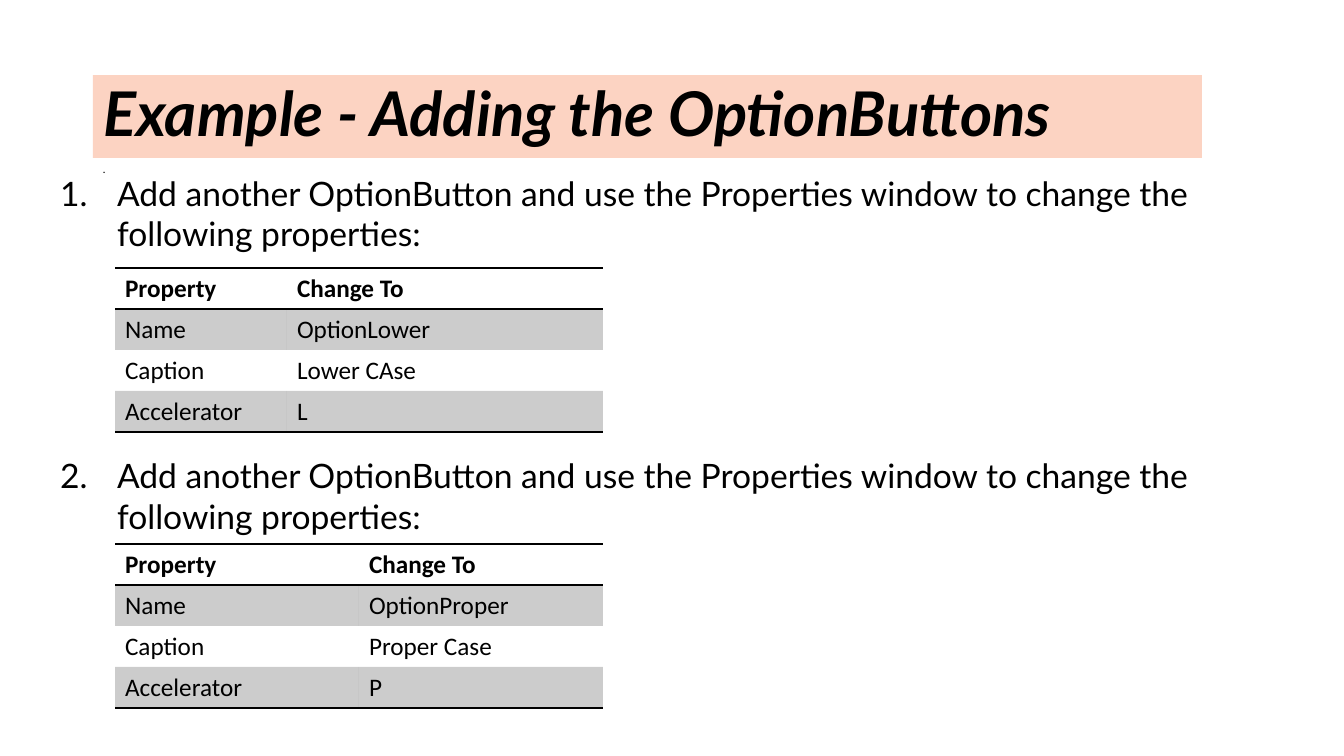
import pptx
import pptx.dml.color
import pptx.enum.text
import pptx.oxml.ns
import pptx.util
from lxml import etree

PX = 914400 / 100.8
BLACK = pptx.dml.color.RGBColor(0x00, 0x00, 0x00)
PEACH = pptx.dml.color.RGBColor(0xFC, 0xD3, 0xC2)
PLAIN_TABLE_STYLE = "{2D5ABB26-0587-4C30-8999-92F81FD0307C}"
BAND_OPACITY = 20

STEP = "Add another OptionButton and use the Properties window to change the following properties:"
LOWER_ROWS = [("Property", "Change To"), ("Name", "OptionLower"),
              ("Caption", "Lower CAse"), ("Accelerator", "L")]
PROPER_ROWS = [("Property", "Change To"), ("Name", "OptionProper"),
               ("Caption", "Proper Case"), ("Accelerator", "P")]


def px(count):
    return pptx.util.Emu(round(count * PX))


def add_element(parent, tag, **attributes):
    element = etree.SubElement(parent, pptx.oxml.ns.qn(tag))
    for name, value in attributes.items():
        element.set(name, str(value))
    return element


def place(box, left, top, width, height):
    box.left, box.top, box.width, box.height = map(px, (left, top, width, height))


def style_text(paragraph, font_name, size, bold=False, italic=False):
    for span in paragraph.runs:
        span.font.name = font_name
        span.font.size = pptx.util.Pt(size)
        span.font.bold = bold
        span.font.italic = italic
        span.font.color.rgb = BLACK


def fill_title(box, text):
    place(box, 93, 75, 1109, 83)
    box.fill.solid()
    box.fill.fore_color.rgb = PEACH
    frame = box.text_frame
    frame.text = text
    frame.auto_size = pptx.enum.text.MSO_AUTO_SIZE.NONE
    frame.vertical_anchor = pptx.enum.text.MSO_ANCHOR.MIDDLE
    paragraph = frame.paragraphs[0]
    paragraph.alignment = pptx.enum.text.PP_ALIGN.LEFT
    paragraph.line_spacing = 0.9
    style_text(paragraph, "Lato", 44, bold=True, italic=True)


def fill_steps(box, steps, gap):
    """Write a numbered list with a gap in points, where a table fits, between steps."""
    place(box, 50, 168, 1151, 417)
    frame = box.text_frame
    frame.text = "\n".join(steps)
    frame.auto_size = pptx.enum.text.MSO_AUTO_SIZE.NONE
    for index, paragraph in enumerate(frame.paragraphs):
        properties = paragraph._p.get_or_add_pPr()
        properties.set("marL", str(px(57)))
        properties.set("indent", str(px(-57)))
        add_element(properties, "a:buFont", typeface="+mj-lt")
        add_element(properties, "a:buAutoNum", type="arabicPeriod")
        paragraph.space_before = pptx.util.Pt(gap if index else 0)
        style_text(paragraph, "Lato", 24)


def add_small_text(page, text):
    box = page.shapes.add_textbox(px(93), px(157), px(1159), px(586))
    box.text_frame.word_wrap = True
    box.text_frame.text = text
    style_text(box.text_frame.paragraphs[0], "Lato", 8)


def add_border(cell, tag):
    line = add_element(cell._tc.get_or_add_tcPr(), tag, w=pptx.util.Pt(1))
    add_element(add_element(line, "a:solidFill"), "a:srgbClr", val=BLACK)


def shade(cell):
    cell.fill.solid()
    cell.fill.fore_color.rgb = BLACK
    color = cell._tc.tcPr.find(".//" + pptx.oxml.ns.qn("a:solidFill") + "[last()]/"
                               + pptx.oxml.ns.qn("a:srgbClr")) \
        if cell._tc.tcPr.find(pptx.oxml.ns.qn("a:lnB")) is None \
        else cell._tc.tcPr.find(pptx.oxml.ns.qn("a:solidFill"))[0]
    add_element(color, "a:alpha", val=BAND_OPACITY * 1000)


def add_property_table(page, top, column_widths, rows):
    frame = page.shapes.add_table(len(rows), len(column_widths), px(115), px(top),
                                  px(sum(column_widths)), px(41 * len(rows)))
    table = frame.table
    table.first_row = table.horz_banding = False
    table._tbl.tblPr.find(pptx.oxml.ns.qn("a:tableStyleId")).text = PLAIN_TABLE_STYLE
    for column, width in zip(table.columns, column_widths):
        column.width = px(width)
    for row_index, texts in enumerate(rows):
        table.rows[row_index].height = px(41)
        is_header = row_index == 0
        for column_index, text in enumerate(texts):
            cell = table.cell(row_index, column_index)
            cell.text_frame.text = text
            style_text(cell.text_frame.paragraphs[0], "Calibri", 18, bold=is_header)
            if is_header:
                add_border(cell, "a:lnT")
            if is_header or row_index == len(rows) - 1:
                add_border(cell, "a:lnB")
            if row_index % 2:
                shade(cell)
            else:
                cell.fill.background()


def main():
    deck = pptx.Presentation()
    deck.slide_width, deck.slide_height = px(1344), px(756)
    page = deck.slides.add_slide(deck.slide_layouts[1])
    fill_title(page.shapes.title, "Example - Adding the OptionButtons")
    fill_steps(page.placeholders[1], [STEP, STEP], gap=144)
    add_small_text(page, ".")
    add_property_table(page, 268, (172, 316), LOWER_ROWS)
    add_property_table(page, 544, (244, 244), PROPER_ROWS)
    deck.save("out.pptx")


if __name__ == "__main__":
    main()
